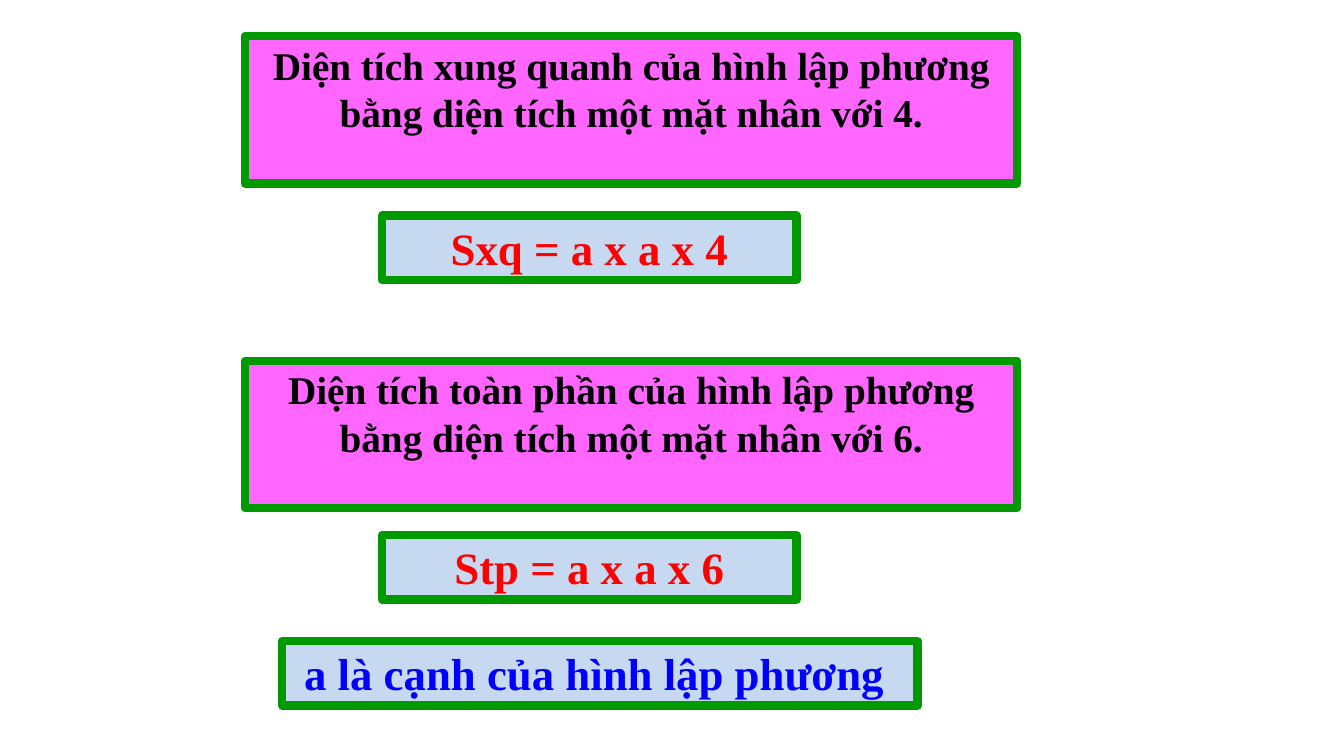
from pptx import Presentation
from pptx.dml.color import RGBColor
from pptx.enum.shapes import MSO_SHAPE
from pptx.enum.text import MSO_ANCHOR, PP_ALIGN
from pptx.util import Inches, Pt

RECTANGLE = MSO_SHAPE.RECTANGLE
TOP = MSO_ANCHOR.TOP
CENTER = PP_ALIGN.CENTER
BLANK_LAYOUT = 6


def color(value):
    return RGBColor.from_string(value)


class FormulaSlide:
    font_name = "Times New Roman"
    border = "009900"
    rule_fill = "FF66FF"
    formula_fill = "C6D9F1"

    def __init__(self, deck):
        self.page = deck.slides.add_slide(deck.slide_layouts[BLANK_LAYOUT])

    def framed_text(self, text, left, top, width, height, fill, size, ink):
        box = self.page.shapes.add_shape(
            RECTANGLE, Inches(left), Inches(top), Inches(width), Inches(height)
        )
        box.shadow.inherit = False
        box.fill.solid()
        box.fill.fore_color.rgb = color(fill)
        box.line.color.rgb = color(self.border)
        box.line.width = Pt(6)
        frame = box.text_frame
        frame.word_wrap = True
        frame.vertical_anchor = TOP
        para = frame.paragraphs[0]
        para.text = text
        para.alignment = CENTER
        para.font.name = self.font_name
        para.font.size = Pt(size)
        para.font.bold = True
        para.font.color.rgb = color(ink)

    def rule(self, text, top):
        self.framed_text(text, 2.43, top, 7.66, 1.46, self.rule_fill, 28, "000000")

    def formula(self, text, top, left=3.79, width=4.11, ink="FF0000"):
        self.framed_text(text, left, top, width, 0.64, self.formula_fill, 32, ink)


def main():
    deck = Presentation()
    deck.slide_width = Inches(13.33)
    deck.slide_height = Inches(7.5)

    slide = FormulaSlide(deck)
    slide.rule("Diện tích xung quanh của hình lập phương bằng diện tích một mặt nhân với 4.", 0.36)
    slide.formula("Sxq = a x a x 4", 2.14)
    slide.rule("Diện tích toàn phần của hình lập phương bằng diện tích một mặt nhân với 6.", 3.58)
    slide.formula("Stp = a x a x 6", 5.31)
    slide.formula("a là cạnh của hình lập phương ", 6.36, left=2.8, width=6.3, ink="0000FF")

    deck.save("out.pptx")


if __name__ == "__main__":
    main()
